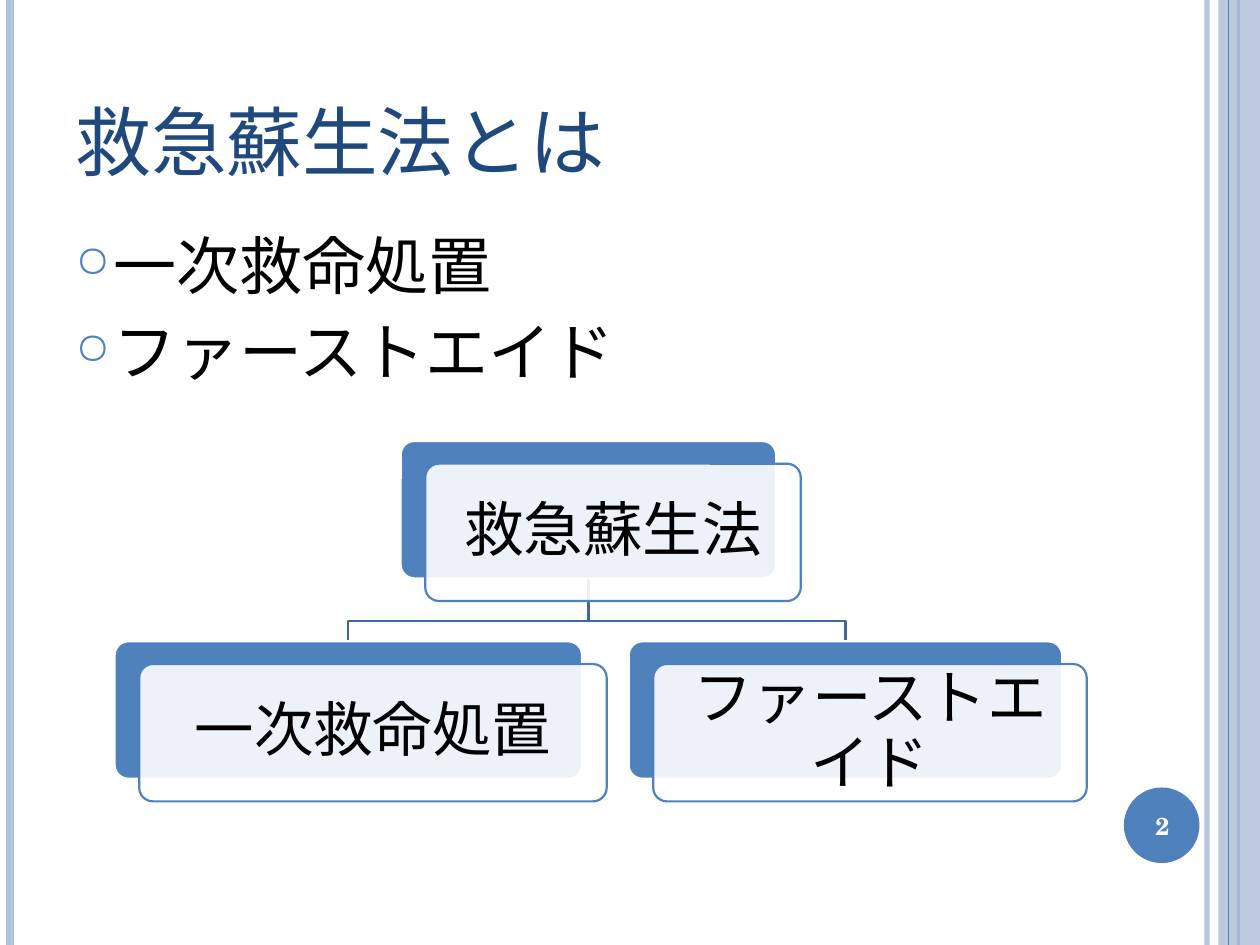
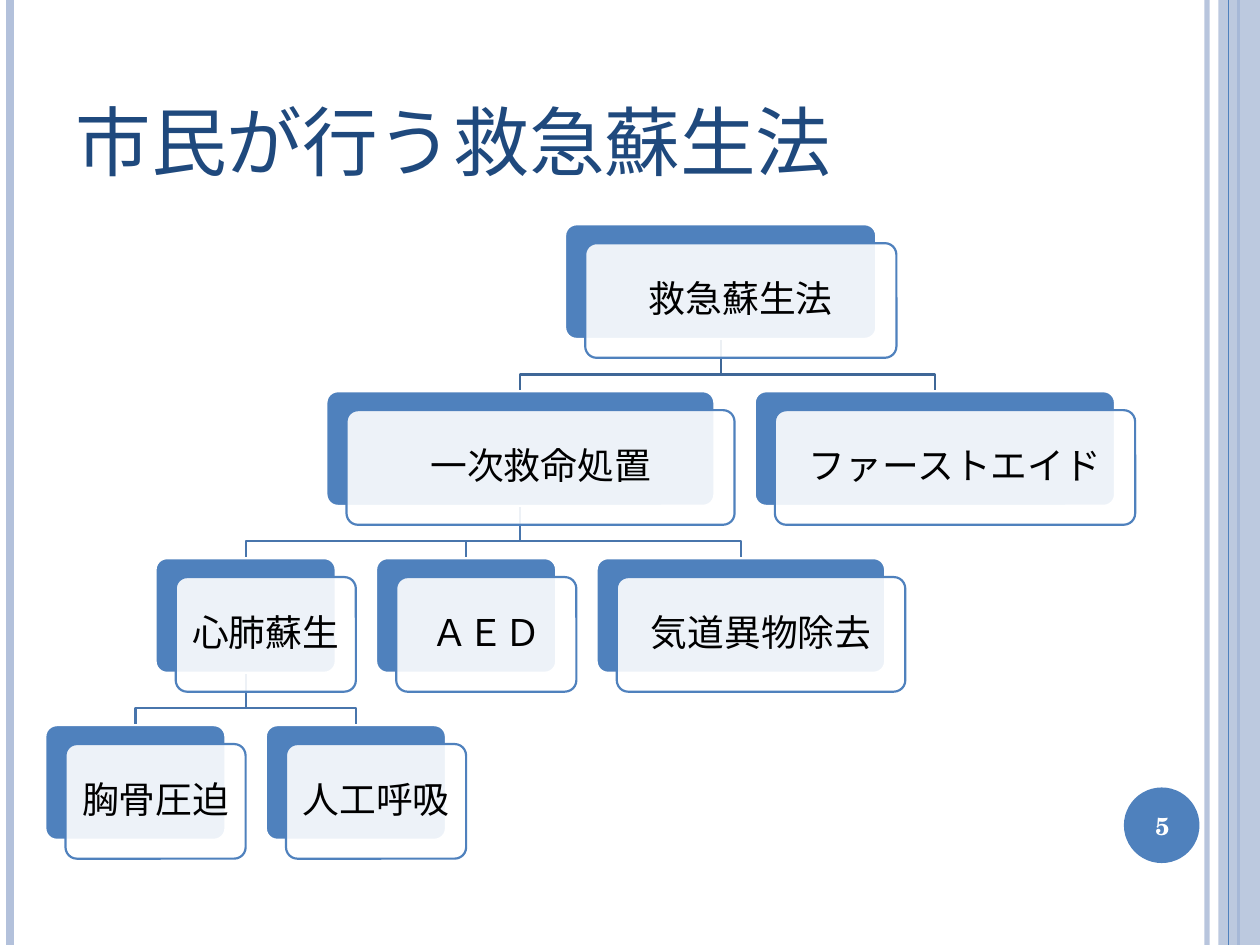
"""Builds two slides on resuscitation, each with a tree of stacked cards."""
from collections import defaultdict
from dataclasses import dataclass
from typing import NamedTuple

from lxml import etree
from pptx import Presentation
from pptx import util as u
from pptx.dml.color import RGBColor
from pptx.enum import lang, shapes, text
from pptx.oxml import ns

COLUMNS, ROWS = 100, 75
WIDTH, HEIGHT = u.Inches(10), u.Inches(7.5)
FONT = "TeX Gyre Schola"
COLORS = {
    "accent": "4F81BD",
    "band": "B3C1DB",
    "title": "1F497D",
    "text": "000000",
    "white": "FFFFFF",
    "first_branch": "3F6797",
    "lower_branch": "4875AC",
}


class Box(NamedTuple):
    left: float
    top: float
    width: float
    height: float


class Rule(NamedTuple):
    column: float
    color: str
    weight: float
    opacity: int = 100


@dataclass(frozen=True)
class Node:
    label: str
    width: float
    children: tuple["Node", ...] = ()


@dataclass(frozen=True)
class Tree:
    root: Node
    left: float
    top: float
    card_height: float
    column_gap: float
    row_gap: float
    shift: tuple[float, float]
    font_size: float
    inset: float


@dataclass(frozen=True)
class Page:
    number: int
    title: str
    tree: Tree
    bullets: tuple[str, ...] = ()


RULES_BEHIND = (
    Rule(95.8, "band", 3, 93),
    Rule(0.8, "band", 4.5),
    Rule(98.3, "accent", 1.5),
)
RULE_IN_FRONT = Rule(97.5, "accent", 0.75)
BAND = Box(96.7, 0, 3.3, ROWS)
BADGE = Box(89.2, 62.5, 6, 6)
NUMBER = Box(88.9, 62.7, 6.7, 5.7)
TITLE = Box(5, 3, 82.8, 12.5)
BODY = Box(5, 17.5, 81.7, 53.3)

PAGES = (
    Page(
        2,
        "救急蘇生法とは",
        Tree(
            Node("救急蘇生法", 29.8, (
                Node("一次救命処置", 37.1),
                Node("ファーストエイド", 34.4),
            )),
            left=9.1, top=35, card_height=10.9, column_gap=3.7, row_gap=5,
            shift=(1.95, 1.8), font_size=34, inset=1.4,
        ),
        ("一次救命処置", "ファーストエイド"),
    ),
    Page(
        5,
        "市民が行う救急蘇生法",
        Tree(
            Node("救急蘇生法", 24.7, (
                Node("一次救命処置", 30.8, (
                    Node("心肺蘇生", 14.3, (
                        Node("胸骨圧迫", 14.3),
                        Node("人工呼吸", 14.3),
                    )),
                    Node("ＡＥＤ", 14.3),
                    Node("気道異物除去", 22.9),
                )),
                Node("ファーストエイド", 28.6),
            )),
            left=3.6, top=17.8, card_height=9.1, column_gap=3.2, row_gap=4.15,
            shift=(1.6, 1.5), font_size=21, inset=0.9,
        ),
    ),
)


def across(columns: float) -> int:
    """Return the length of a number of grid columns."""
    return round(WIDTH * columns / COLUMNS)


def down(rows: float) -> int:
    """Return the length of a number of grid rows."""
    return round(HEIGHT * rows / ROWS)


def place(box: Box) -> tuple[int, int, int, int]:
    """Return a grid box as slide lengths."""
    return across(box.left), down(box.top), across(box.width), down(box.height)


def rgb(name: str) -> RGBColor:
    """Look up a named colour."""
    return RGBColor.from_string(COLORS[name])


def set_color(target, name: str, opacity: int = 100) -> None:
    """Give a fill a solid colour and an opacity in percent."""
    target.solid()
    target.fore_color.rgb = rgb(name)
    if opacity < 100:
        color = target._xPr.find(ns.qn("a:solidFill"))[0]
        etree.SubElement(color, ns.qn("a:alpha"), val=str(opacity * 1000))


def add_panel(slide, kind, box: Box, fill: str, opacity: int = 100, line: str | None = None):
    """Add a preset shape with a plain fill and an optional outline."""
    shape = slide.shapes.add_shape(kind, *place(box))
    shape.shadow.inherit = False
    set_color(shape.fill, fill, opacity)
    if line:
        set_color(shape.line.fill, line)
        shape.line.width = u.Pt(1.25)
    else:
        shape.line.fill.background()
    return shape


def add_rule(slide, rule: Rule) -> None:
    """Add a vertical line over the whole slide height."""
    x = across(rule.column)
    line = slide.shapes.add_connector(shapes.MSO_CONNECTOR.STRAIGHT, x, 0, x, HEIGHT)
    set_color(line.line.fill, rule.color, rule.opacity)
    line.line.width = u.Pt(rule.weight)
    etree.SubElement(line._element.spPr, ns.qn("a:effectLst"))


def add_bullet(paragraph) -> None:
    """Give a paragraph a hanging ring bullet."""
    properties = paragraph._p.get_or_add_pPr()
    properties.set("marL", str(across(3)))
    properties.set("indent", str(-across(3)))
    color = etree.SubElement(properties, ns.qn("a:buClr"))
    etree.SubElement(color, ns.qn("a:srgbClr"), val=COLORS["accent"])
    etree.SubElement(properties, ns.qn("a:buSzPct"), val="70000")
    etree.SubElement(properties, ns.qn("a:buChar"), char="○")


def write(shape, *lines: str, size: float, color: str = "text", bold: bool = False,
          small_caps: bool = False, align=text.PP_ALIGN.LEFT,
          anchor=text.MSO_ANCHOR.MIDDLE, inset: float | None = None,
          bullets: bool = False, line_spacing: float | None = None,
          after_percent: int = 0) -> None:
    """Write paragraphs into a shape in one format."""
    frame = shape.text_frame
    frame.word_wrap = True
    frame.vertical_anchor = anchor
    if inset is not None:
        frame.margin_left = frame.margin_right = across(inset)
        frame.margin_top = frame.margin_bottom = down(inset)
    for index, line in enumerate(lines):
        paragraph = frame.paragraphs[0] if index == 0 else frame.add_paragraph()
        paragraph.alignment = align
        if line_spacing:
            paragraph.line_spacing = line_spacing
        if after_percent:
            after = etree.SubElement(paragraph._p.get_or_add_pPr(), ns.qn("a:spcAft"))
            etree.SubElement(after, ns.qn("a:spcPct"), val=str(after_percent * 1000))
        if bullets:
            paragraph.space_before = u.Pt(6)
            add_bullet(paragraph)
        run = paragraph.add_run()
        run.text = line
        font = run.font
        font.name, font.size, font.bold = FONT, u.Pt(size), bold
        font.color.rgb = rgb(color)
        font.language_id = lang.MSO_LANGUAGE_ID.JAPANESE
        if small_caps:
            font._element.set("cap", "small")


def lay_out(tree: Tree) -> dict[Node, Box]:
    """Pack each level from the left and centre parents over their children."""
    next_left: dict[int, float] = defaultdict(lambda: tree.left)
    boxes: dict[Node, Box] = {}

    def settle(node: Node, depth: int) -> None:
        """Settle the children of a node, then the node."""
        for child in node.children:
            settle(child, depth + 1)
        left = next_left[depth]
        if node.children:
            first, last = boxes[node.children[0]], boxes[node.children[-1]]
            left = (first.left + last.left + last.width - node.width) / 2
        top = tree.top + depth * (tree.card_height + tree.row_gap)
        boxes[node] = Box(left, top, node.width, tree.card_height)
        next_left[depth] = left + node.width + tree.column_gap

    settle(tree.root, 0)
    return boxes


def add_branch(slide, parent: Box, child: Box, color: str) -> None:
    """Add the bent line from a parent card down to a child card."""
    start, end = across(parent.left + parent.width / 2), across(child.left + child.width / 2)
    bottom = parent.top + parent.height
    bend = down(bottom + 0.68 * (child.top - bottom))
    builder = slide.shapes.build_freeform(start, down(bottom))
    builder.add_line_segments([(start, bend), (end, bend), (end, down(child.top))], close=False)
    branch = builder.convert_to_shape()
    branch.shadow.inherit = False
    branch.fill.background()
    set_color(branch.line.fill, color)
    branch.line.width = u.Pt(1.25)


def add_card(slide, node: Node, box: Box, tree: Tree) -> None:
    """Add a solid card with a shifted translucent card that holds the label."""
    rounded = shapes.MSO_SHAPE.ROUNDED_RECTANGLE
    shift_x, shift_y = tree.shift
    front_box = box._replace(left=box.left + shift_x, top=box.top + shift_y)
    back = add_panel(slide, rounded, box, "accent", line="white")
    front = add_panel(slide, rounded, front_box, "white", 90, "accent")
    back.adjustments[0] = front.adjustments[0] = 0.1
    write(front, node.label, size=tree.font_size, align=text.PP_ALIGN.CENTER,
          inset=tree.inset, line_spacing=0.9, after_percent=35)


def add_tree(slide, tree: Tree) -> None:
    """Draw all branches of a tree and then its cards."""
    boxes = lay_out(tree)
    for node, box in boxes.items():
        color = "first_branch" if node is tree.root else "lower_branch"
        for child in node.children:
            add_branch(slide, box, boxes[child], color)
    for node, box in boxes.items():
        add_card(slide, node, box, tree)


def add_page(presentation, page: Page) -> None:
    """Add one slide with its frame, title, bullets, tree and number."""
    slide = presentation.slides.add_slide(presentation.slide_layouts[6])
    for rule in RULES_BEHIND:
        add_rule(slide, rule)
    add_panel(slide, shapes.MSO_SHAPE.RECTANGLE, BAND, "band", 87)
    add_rule(slide, RULE_IN_FRONT)
    add_panel(slide, shapes.MSO_SHAPE.OVAL, BADGE, "accent")
    write(slide.shapes.add_textbox(*place(TITLE)), page.title, size=54, color="title",
          small_caps=True, anchor=text.MSO_ANCHOR.BOTTOM)
    if page.bullets:
        write(slide.shapes.add_textbox(*place(BODY)), *page.bullets, size=36,
              bullets=True, anchor=text.MSO_ANCHOR.TOP)
    add_tree(slide, page.tree)
    write(slide.shapes.add_textbox(*place(NUMBER)), str(page.number), size=14,
          color="white", bold=True, align=text.PP_ALIGN.CENTER)


def main() -> None:
    """Build and save the presentation."""
    presentation = Presentation()
    presentation.slide_width, presentation.slide_height = WIDTH, HEIGHT
    for page in PAGES:
        add_page(presentation, page)
    presentation.save("out.pptx")


if __name__ == "__main__":
    main()
